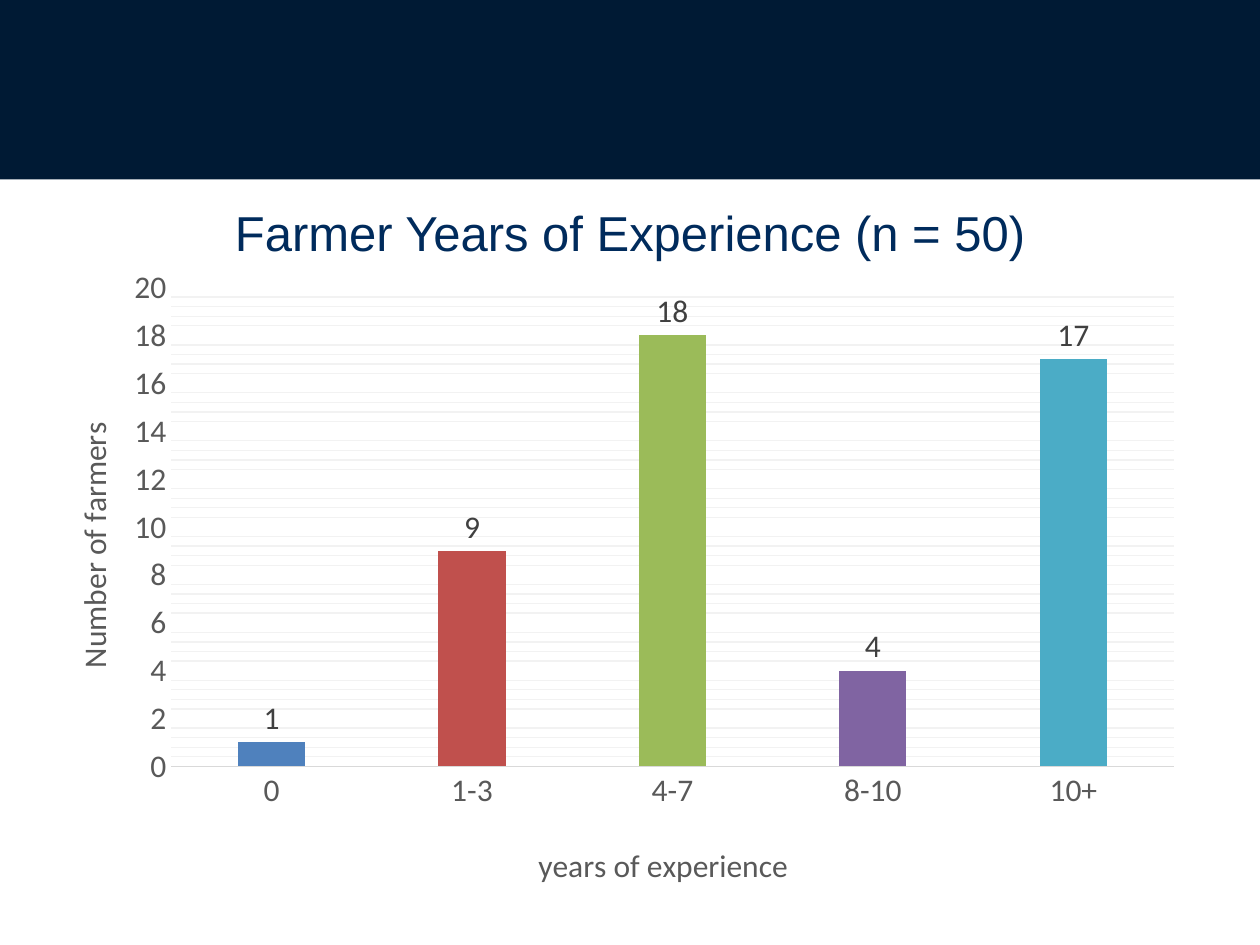
import dataclasses

import lxml.etree
import pptx
import pptx.chart.data
import pptx.dml.color
import pptx.enum.chart
import pptx.enum.shapes
import pptx.enum.text
import pptx.oxml
import pptx.oxml.ns
import pptx.util

XL = pptx.enum.chart


@dataclasses.dataclass(frozen=True)
class Theme:
    band: str = "001A34"
    title: str = "002B5C"
    axis_text: str = "595959"
    label: str = "404040"
    axis_line: str = "D9D9D9"
    grid: str = "F2F2F2"
    bars: tuple = ("4F81BD", "C0504D", "9BBB59", "8064A2", "4BACC6")
    title_font: str = "Arial"
    chart_font: str = "Calibri"
    title_size: int = 28
    chart_size: int = 18
    line_width: float = 0.75


THEME = Theme()


def rgb(value):
    return pptx.dml.color.RGBColor.from_string(value)


def apply(obj, values):
    for name, value in values.items():
        setattr(obj, name, value)


def style_font(font, name, size, color):
    apply(font, {"name": name, "size": pptx.util.Pt(size), "bold": False})
    font.color.rgb = rgb(color)


def share_box(prs, x, y, w, h):
    return (int(prs.slide_width * x), int(prs.slide_height * y),
            int(prs.slide_width * w), int(prs.slide_height * h))


def set_layout(parent, index, values):
    qn = pptx.oxml.ns.qn
    for old in parent.findall(qn("c:layout")):
        parent.remove(old)
    layout = pptx.oxml.parse_xml(f"<c:layout {pptx.oxml.ns.nsdecls('c')}/>")
    manual = lxml.etree.SubElement(layout, qn("c:manualLayout"))
    for tag, value in values.items():
        lxml.etree.SubElement(manual, qn(f"c:{tag}")).set("val", str(value))
    parent.insert(index, layout)


def add_minor_gridlines(axis):
    axis.has_minor_gridlines = True
    grid = axis._element.find(pptx.oxml.ns.qn("c:minorGridlines"))
    grid.append(pptx.oxml.parse_xml(
        f'<c:spPr {pptx.oxml.ns.nsdecls("c", "a")}>'
        f'<a:ln w="{pptx.util.Pt(THEME.line_width)}"><a:solidFill>'
        f'<a:srgbClr val="{THEME.grid}"/></a:solidFill></a:ln></c:spPr>'))


def add_band(s, box):
    sp = s.shapes.add_shape(pptx.enum.shapes.MSO_SHAPE.RECTANGLE, *box)
    sp.shadow.inherit = False
    sp.fill.solid()
    sp.fill.fore_color.rgb = rgb(THEME.band)
    sp.line.fill.background()


def add_title(s, box, text):
    tf = s.shapes.add_textbox(*box).text_frame
    apply(tf, {"word_wrap": True, "margin_top": int(box[3] * 0.2), "margin_bottom": 0,
               "vertical_anchor": pptx.enum.text.MSO_ANCHOR.TOP})
    p = tf.paragraphs[0]
    p.alignment = pptx.enum.text.PP_ALIGN.CENTER
    r = p.add_run()
    r.text = text
    style_font(r.font, THEME.title_font, THEME.title_size, THEME.title)


def style_axis(axis, title, x, y):
    apply(axis, {"major_tick_mark": XL.XL_TICK_MARK.NONE,
                 "minor_tick_mark": XL.XL_TICK_MARK.NONE,
                 "has_major_gridlines": False, "has_title": True})
    font = (THEME.chart_font, THEME.chart_size, THEME.axis_text)
    style_font(axis.tick_labels.font, *font)
    r = axis.axis_title.text_frame.paragraphs[0].add_run()
    r.text = title
    style_font(r.font, *font)
    set_layout(axis.axis_title._element, 1,
               {"xMode": "edge", "yMode": "edge", "x": x, "y": y})


def add_experience_chart(s, box, counts):
    data = pptx.chart.data.CategoryChartData()
    data.categories = list(counts)
    data.add_series("Series 1", list(counts.values()))
    chart = s.shapes.add_chart(XL.XL_CHART_TYPE.COLUMN_CLUSTERED, *box, data).chart
    apply(chart, {"has_title": False, "has_legend": False})
    style_font(chart.font, THEME.chart_font, THEME.chart_size, THEME.axis_text)

    style_axis(chart.category_axis, "years of experience", 0.43, 0.9)
    line = chart.category_axis.format.line
    line.color.rgb = rgb(THEME.axis_line)
    line.width = pptx.util.Pt(THEME.line_width)

    axis = chart.value_axis
    style_axis(axis, "Number of farmers", 0.03, 0.25)
    apply(axis, {"minimum_scale": 0, "maximum_scale": 20, "major_unit": 2,
                 "minor_unit": 0.4})
    add_minor_gridlines(axis)
    axis.format.line.fill.background()

    plot = chart.plots[0]
    apply(plot, {"gap_width": 199, "vary_by_categories": False, "has_data_labels": True})
    apply(plot.data_labels, {"show_value": True,
                             "position": XL.XL_LABEL_POSITION.OUTSIDE_END})
    style_font(plot.data_labels.font, THEME.chart_font, THEME.chart_size, THEME.label)
    for i, color in enumerate(THEME.bars):
        fill = plot.series[0].points[i].format.fill
        fill.solid()
        fill.fore_color.rgb = rgb(color)
    set_layout(chart._chartSpace.chart.plotArea, 0,
               {"layoutTarget": "inner", "xMode": "edge", "yMode": "edge",
                "x": 0.12, "y": 0.05, "w": 0.86, "h": 0.74})


def main():
    prs = pptx.Presentation()
    apply(prs, {"slide_width": pptx.util.Inches(10), "slide_height": pptx.util.Inches(7.5)})
    s = prs.slides.add_slide(prs.slide_layouts[6])
    add_band(s, share_box(prs, 0, 0, 1, 0.19))
    add_title(s, share_box(prs, 0.05, 0.2, 0.9, 0.07), "Farmer Years of Experience (n = 50)")
    add_experience_chart(s, share_box(prs, 0.025, 0.27, 0.925, 0.685),
                         {"0": 1, "1-3": 9, "4-7": 18, "8-10": 4, "10+": 17})
    prs.save("out.pptx")


if __name__ == "__main__":
    main()
